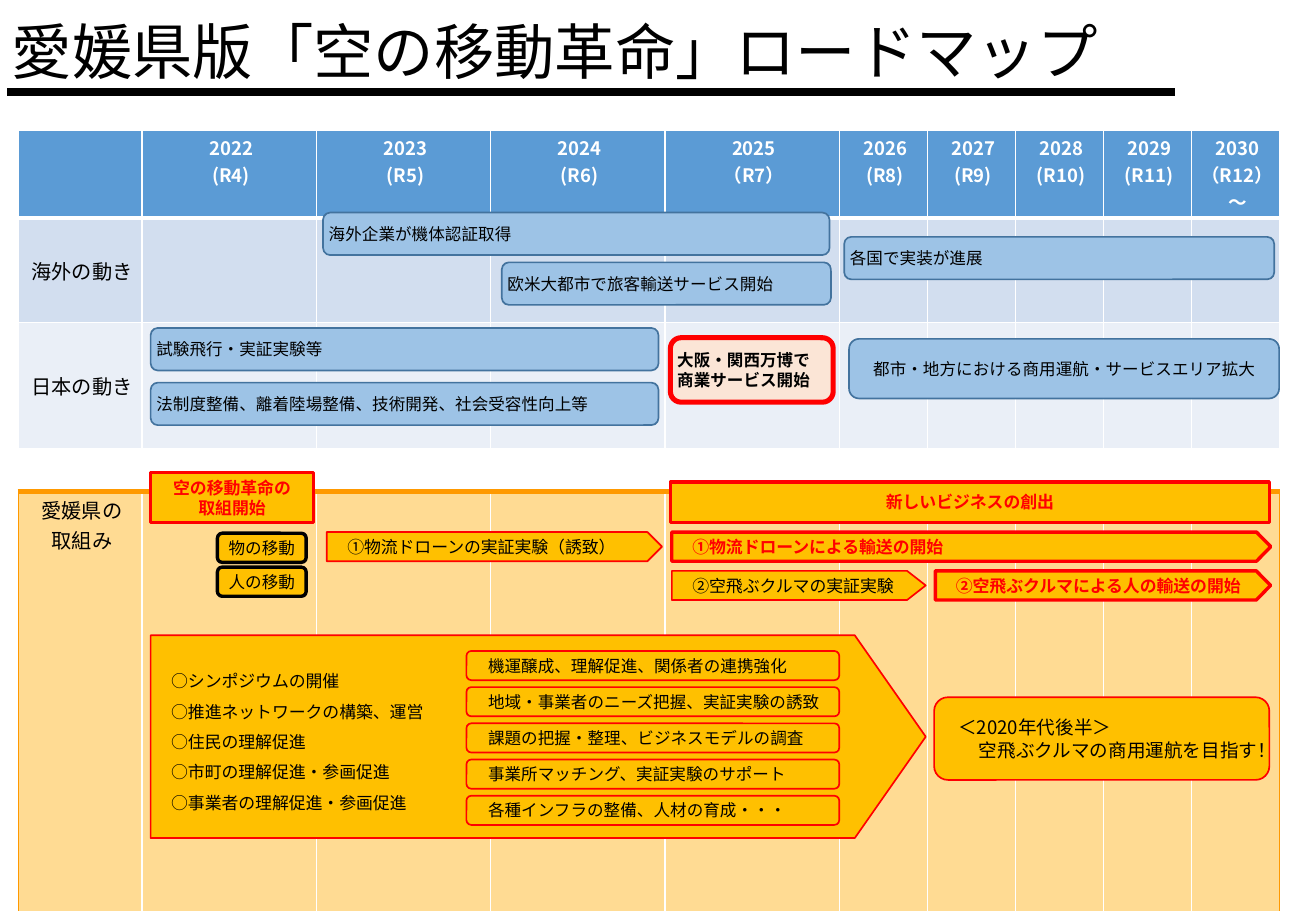
from lxml.etree import SubElement
from pptx import Presentation
from pptx.dml.color import RGBColor
from pptx.enum.shapes import MSO_CONNECTOR, MSO_SHAPE
from pptx.enum.text import MSO_ANCHOR, PP_ALIGN
from pptx.oxml.ns import qn
from pptx.util import Pt

FONT = "Noto Sans CJK JP"
BLACK, WHITE, RED = "000000", "FFFFFF", "FF0000"
AMBER, ORANGE, PALE_ORANGE = "FFC000", "FF9900", "FFCC66"
HEADER_BLUE, BAR_BLUE, BAR_EDGE = "5B9BD5", "9DC3E6", "43739E"
INSET = 2.16
BAR_HEIGHT, STEP_HEIGHT = 25.2, 17.3

YEARS = [("2022", "(R4)"), ("2023", "(R5)"), ("2024", "(R6)"), ("2025", "（R7）"),
         ("2026", "(R8)"), ("2027", "(R9)"), ("2028", "(R10)"), ("2029", "(R11)"),
         ("2030", "（R12）～")]
COLUMN_WIDTHS = [73.5] + [103.3] * 4 + [52.2] * 5
ROW_HEIGHTS = [46, 62, 75, 25.2, 251.3]
ROW_FILLS = [HEADER_BLUE, "D2DEEF", "EAEFF7", None, PALE_ORANGE]
ROW_LABELS = [[], ["海外の動き"], ["日本の動き"], [], ["愛媛県の", "取組み"]]

TREND_BARS = [
    (191.5, 126, 300.2, "海外企業が機体認証取得"),
    (297.4, 155.5, 195.1, "欧米大都市で旅客輸送サービス開始"),
    (500.4, 140.4, 254.9, "各国で実装が進展"),
    (89.3, 194.4, 301, "試験飛行・実証実験等"),
    (89.3, 226.8, 301, "法制度整備、離着陸場整備、技術開発、社会受容性向上等"),
]
MILESTONES = [
    (89.3, 280.1, 96.5, 29.5, ["空の移動革命の", "取組開始"]),
    (397.4, 285.8, 355, 23.8, ["新しいビジネスの創出"]),
]
TRIALS = [
    (193.7, 315.4, 198.7, 0.5, "①物流ドローンの実証実験（誘致）"),
    (398.2, 338.4, 150.5, 0.64, "②空飛ぶクルマの実証実験"),
]
LAUNCHES = [
    (398.2, 315.4, 355, "①物流ドローンによる輸送の開始"),
    (554.4, 338.4, 198.7, "②空飛ぶクルマによる人の輸送の開始"),
]
ACTIVITIES = ["○シンポジウムの開催", "○推進ネットワークの構築、運営", "○住民の理解促進",
              "○市町の理解促進・参画促進", "○事業者の理解促進・参画促進"]
SUPPORTS = ["機運醸成、理解促進、関係者の連携強化", "地域・事業者のニーズ把握、実証実験の誘致",
            "課題の把握・整理、ビジネスモデルの調査", "事業所マッチング、実証実験のサポート",
            "各種インフラの整備、人材の育成・・・"]


def rgb(value):
    """Turn a hex string into a colour."""
    return RGBColor.from_string(value)


def write(frame, lines, size, color=BLACK, bold=False, align=PP_ALIGN.LEFT,
          indents=(), spacing=None):
    """Fill a text frame with one paragraph per line."""
    for index, line in enumerate(lines):
        paragraph = frame.paragraphs[0] if index == 0 else frame.add_paragraph()
        paragraph.text = line
        paragraph.alignment = align
        if spacing:
            paragraph.line_spacing = Pt(spacing)
        font = paragraph.font
        font.name, font.size, font.bold = FONT, Pt(size), bold
        font.color.rgb = rgb(color)
        properties = paragraph._p.get_or_add_pPr()
        SubElement(properties.find(qn("a:defRPr")), qn("a:ea"), typeface=FONT)
        if indents:
            properties.set("marL", "0")
            properties.set("indent", str(Pt(indents[index])))


def add_box(slide, kind, place, lines, fill=AMBER, edge=RED, width=1, adjust=None,
            size=10, **style):
    """Add a filled shape with vertically centred text."""
    box = slide.shapes.add_shape(kind, *map(Pt, place))
    box.shadow.inherit = False
    if adjust is not None:
        box.adjustments[0] = adjust
    box.fill.solid()
    box.fill.fore_color.rgb = rgb(fill)
    box.line.color.rgb = rgb(edge)
    box.line.width = Pt(width)
    frame = box.text_frame
    frame.word_wrap = True
    frame.vertical_anchor = MSO_ANCHOR.MIDDLE
    frame.margin_left = frame.margin_right = Pt(INSET)
    frame.margin_top = frame.margin_bottom = Pt(INSET)
    write(frame, lines, size, **style)


def set_borders(cell, left, right, top, bottom):
    """Draw the four cell borders, each a (colour, width) pair."""
    properties = cell._tc.get_or_add_tcPr()
    for tag, (color, width) in zip(("lnL", "lnR", "lnT", "lnB"), (left, right, top, bottom)):
        border = SubElement(properties, qn(f"a:{tag}"), w=str(Pt(width)))
        SubElement(SubElement(border, qn("a:solidFill")), qn("a:srgbClr"), val=color)


def paint_cell(cell, row, column):
    """Set the borders and fill of a timeline cell by its position."""
    thin, thick = (WHITE, 1), (ORANGE, 3)
    outer = (ORANGE, 1)
    left = outer if (row, column) == (4, 0) else thin
    right = outer if (row, column) == (4, len(YEARS)) else thin
    top = {1: (WHITE, 3), 4: thick}.get(row, thin)
    bottom = {0: (WHITE, 3), 3: thick, 4: outer}.get(row, thin)
    set_borders(cell, left, right, top, bottom)
    fill = ROW_FILLS[row]
    if fill is None:
        cell.fill.background()
        return
    cell.fill.solid()
    cell.fill.fore_color.rgb = rgb(fill)
    if fill == PALE_ORANGE:
        shade = cell._tc.tcPr.find(f"{qn('a:solidFill')}/{qn('a:srgbClr')}")
        SubElement(shade, qn("a:alpha"), val="70000")


def add_timeline(slide):
    """Add the year-by-year table."""
    timeline = slide.shapes.add_table(
        len(ROW_HEIGHTS), len(COLUMN_WIDTHS), Pt(10.8), Pt(77),
        Pt(sum(COLUMN_WIDTHS)), Pt(sum(ROW_HEIGHTS))).table
    timeline.first_row = timeline.horz_banding = False
    for column, width in zip(timeline.columns, COLUMN_WIDTHS):
        column.width = Pt(width)
    for row, height in enumerate(ROW_HEIGHTS):
        timeline.rows[row].height = Pt(height)
        for column in range(len(COLUMN_WIDTHS)):
            cell = timeline.cell(row, column)
            cell.margin_left = cell.margin_top = cell.margin_bottom = Pt(INSET)
            cell.margin_right = 0
            paint_cell(cell, row, column)
            if row in (1, 2):
                cell.vertical_anchor = MSO_ANCHOR.MIDDLE
            if column == 0:
                lines = ROW_LABELS[row]
            else:
                lines = YEARS[column - 1] if row == 0 else []
            header = row == 0
            write(cell.text_frame, lines or [""], 11 if header else 12,
                  WHITE if header else BLACK, header, PP_ALIGN.CENTER)


def add_heading(slide):
    """Add the title and the rule below it."""
    rule = slide.shapes.add_connector(MSO_CONNECTOR.STRAIGHT, Pt(4.3), Pt(54.7),
                                      Pt(696.2), Pt(54.7))
    rule.line.color.rgb = rgb(BLACK)
    rule.line.width = Pt(5)
    SubElement(rule._element.spPr, qn("a:effectLst"))
    title = slide.shapes.add_textbox(0, 0, Pt(713.5), Pt(59.8)).text_frame
    title.word_wrap = True
    title.vertical_anchor = MSO_ANCHOR.MIDDLE
    write(title, ["愛媛県版「空の移動革命」ロードマップ"], 35.8)


def add_trends(slide):
    """Add the overseas and domestic bars."""
    rounded = MSO_SHAPE.ROUNDED_RECTANGLE
    blue = {"fill": BAR_BLUE, "edge": BAR_EDGE, "size": 9.8}
    for left, top, width, text in TREND_BARS:
        add_box(slide, rounded, (left, top, width, BAR_HEIGHT), [text], **blue)
    add_box(slide, rounded, (503.3, 200.9, 254.9, 35.3),
            ["都市・地方における商用運航・サービスエリア拡大"], align=PP_ALIGN.CENTER, **blue)
    add_box(slide, rounded, (397.4, 200.2, 96.5, 38.2), ["大阪・関西万博で", "商業サービス開始"],
            fill="FBE5D6", width=3, size=9.8, bold=True)


def add_prefecture_plan(slide):
    """Add the prefecture's milestones, arrows and activities."""
    rounded, arrow = MSO_SHAPE.ROUNDED_RECTANGLE, MSO_SHAPE.PENTAGON
    for *place, lines in MILESTONES:
        add_box(slide, arrow, place, lines, width=2, adjust=0, color=RED, bold=True,
                align=PP_ALIGN.CENTER)
    for top, text in ((316.1, "物の移動"), (336.2, "人の移動")):
        add_box(slide, rounded, (128.9, top, 52.6, STEP_HEIGHT), [text], edge=BLACK,
                width=2, size=9.8, align=PP_ALIGN.CENTER)
    for left, top, width, point, text in TRIALS:
        add_box(slide, arrow, (left, top, width, STEP_HEIGHT), [text], adjust=point,
                indents=[10])
    for left, top, width, text in LAUNCHES:
        add_box(slide, arrow, (left, top, width, STEP_HEIGHT), [text], width=2,
                adjust=0.49, color=RED, bold=True, indents=[10])
    add_box(slide, arrow, (89.3, 376.6, 459.4, 120.2), ACTIVITIES, adjust=0.35,
            indents=[10] * len(ACTIVITIES), spacing=18)
    for index, text in enumerate(SUPPORTS):
        add_box(slide, rounded, (276.5, 385.9 + 21.45 * index, 221, STEP_HEIGHT), [text],
                size=9.8, indents=[9.8])
    add_box(slide, rounded, (553.7, 413.3, 198.7, 49),
            ["＜2020年代後半＞", "空飛ぶクルマの商用運航を目指す！"], size=11, indents=[9.8, 22])


def main():
    """Build the roadmap slide."""
    deck = Presentation()
    deck.slide_width, deck.slide_height = Pt(780), Pt(540)
    slide = deck.slides.add_slide(deck.slide_layouts[6])
    add_timeline(slide)
    add_heading(slide)
    add_trends(slide)
    add_prefecture_plan(slide)
    deck.save("out.pptx")


if __name__ == "__main__":
    main()
